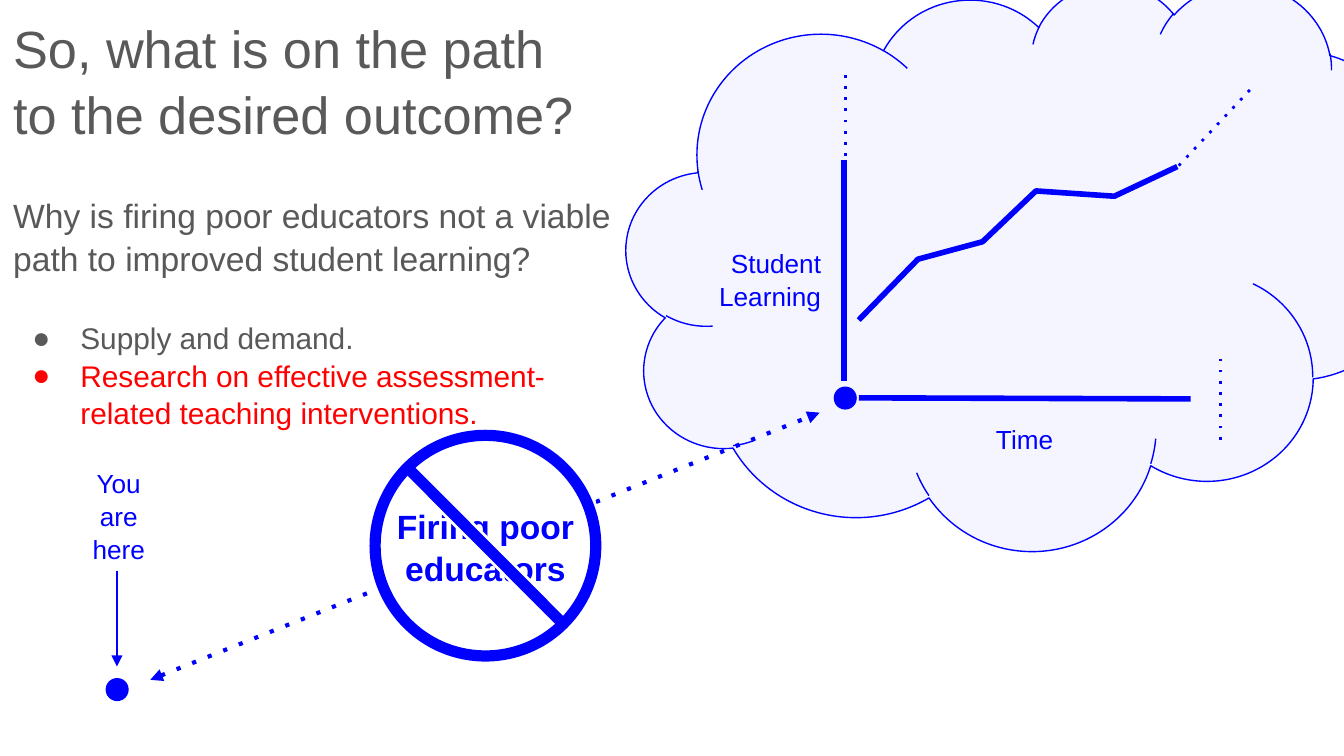
from itertools import pairwise

from lxml.etree import SubElement
from pptx import Presentation
from pptx.dml.color import RGBColor
from pptx.enum.shapes import MSO_CONNECTOR, MSO_SHAPE
from pptx.enum.text import MSO_ANCHOR, MSO_AUTO_SIZE, PP_ALIGN
from pptx.oxml.ns import qn
from pptx.util import Cm, Pt

BLUE = RGBColor(0x00, 0x00, 0xFF)
GREY = RGBColor(0x59, 0x59, 0x59)
RED = RGBColor(0xFF, 0x00, 0x00)
WHITE = RGBColor(0xFF, 0xFF, 0xFF)


def assign(target, values):
    for name, value in values.items():
        setattr(target, name, value)


class PathSlide:
    font = "Arial"
    inset = Cm(0.25)
    line_spacing = 1.05

    def __init__(self, deck):
        self.slide = deck.slides.add_slide(deck.slide_layouts[1])
        self.shapes = self.slide.shapes

    def begin_group(self):
        self.shapes = self.slide.shapes.add_group_shape().shapes

    def end_group(self):
        self.shapes = self.slide.shapes

    def frame(self, shape, anchor=MSO_ANCHOR.TOP):
        margins = {f"margin_{side}": self.inset for side in ("left", "top", "right", "bottom")}
        assign(shape.text_frame, {
            "word_wrap": True, "auto_size": MSO_AUTO_SIZE.NONE,
            "vertical_anchor": anchor, **margins,
        })

    def paragraph(self, paragraph, text, size, color, align=PP_ALIGN.LEFT, bold=False, before=0):
        assign(paragraph, {
            "alignment": align, "line_spacing": self.line_spacing,
            "space_before": Pt(before), "space_after": Pt(0),
        })
        run = paragraph.add_run()
        run.text = text
        assign(run.font, {"name": self.font, "size": Pt(size), "bold": bold})
        run.font.color.rgb = color

    def place(self, shape, left, top, width, height):
        assign(shape, {"left": Cm(left), "top": Cm(top), "width": Cm(width), "height": Cm(height)})

    def title(self, box, text, size):
        heading = self.slide.shapes.title
        self.place(heading, *box)
        self.frame(heading)
        self.paragraph(heading.text_frame.paragraphs[0], text, size, GREY)

    def reasons(self, box, question, points):
        body = self.slide.placeholders[1]
        self.place(body, *box)
        self.frame(body)
        lead = body.text_frame.paragraphs[0]
        self.paragraph(lead, question, 18, GREY)
        self.bullet(lead, None)
        for index, (point, color) in enumerate(points):
            entry = body.text_frame.add_paragraph()
            self.paragraph(entry, point, 16, color, before=0 if index else 21.7)
            self.bullet(entry, color)

    def bullet(self, paragraph, color):
        properties = paragraph._p.get_or_add_pPr()
        left, indent = (Cm(1.27), Cm(-0.91)) if color else (0, 0)
        properties.set("marL", str(left))
        properties.set("indent", str(indent))
        if color is None:
            SubElement(properties, qn("a:buNone"))
            return
        SubElement(SubElement(properties, qn("a:buClr")), qn("a:srgbClr"), val=str(color))
        SubElement(properties, qn("a:buFont"), typeface=self.font)
        SubElement(properties, qn("a:buChar"), char="●")

    def label(self, box, lines, size=14, align=PP_ALIGN.CENTER, anchor=MSO_ANCHOR.TOP,
              bold=False, fill=None):
        text_box = self.shapes.add_textbox(*map(Cm, box))
        self.frame(text_box, anchor)
        if fill is not None:
            text_box.fill.solid()
            text_box.fill.fore_color.rgb = fill
        frame = text_box.text_frame
        for index, line in enumerate(lines):
            entry = frame.add_paragraph() if index else frame.paragraphs[0]
            self.paragraph(entry, line, size, BLUE, align, bold)

    def outline(self, shape, width, color=BLUE):
        shape.line.color.rgb = color
        shape.line.width = Pt(width)

    def preset(self, kind, box, width=0.75, fill=None, opacity=None):
        shape = self.shapes.add_shape(kind, *map(Cm, box))
        shape.shadow.inherit = False
        self.outline(shape, width)
        if fill is None:
            shape.fill.background()
            return
        shape.fill.solid()
        shape.fill.fore_color.rgb = fill
        if opacity is not None:
            tint = shape._element.spPr.find(qn("a:solidFill")).find(qn("a:srgbClr"))
            SubElement(tint, qn("a:alpha"), val=str(opacity * 1000))

    def dot(self, left, top):
        self.preset(MSO_SHAPE.OVAL, (left, top, 0.41, 0.41), fill=BLUE)

    def line(self, start, end, width, color=BLUE, dotted=False, arrows=()):
        connector = self.shapes.add_connector(
            MSO_CONNECTOR.STRAIGHT, *map(Cm, (*start, *end)))
        self.outline(connector, width, color)
        stroke = connector.line._get_or_add_ln()
        if dotted:
            SubElement(stroke, qn("a:prstDash"), val="dot")
        for arrow in arrows:
            SubElement(stroke, qn(f"a:{arrow}"), type="triangle")
        SubElement(connector._element.spPr, qn("a:effectLst"))

    def curve(self, points, width):
        first, *rest = [(Cm(x), Cm(y)) for x, y in points]
        builder = self.shapes.build_freeform(*first)
        builder.add_line_segments(rest, close=False)
        trend = builder.convert_to_shape()
        trend.shadow.inherit = False
        trend.fill.background()
        self.outline(trend, width)


def main():
    deck = Presentation()
    assign(deck, {"slide_width": Cm(25.4), "slide_height": Cm(14.29)})
    page = PathSlide(deck)

    page.title((0, 0, 11.4, 1.6), "So, what is on the path to the desired outcome?", 28)
    page.reasons(
        (0, 3.4, 11.84, 5.05),
        "Why is firing poor educators not a viable path to improved student learning?",
        [("Supply and demand.", GREY),
         ("Research on effective assessment- related teaching interventions.", RED)])

    page.preset(MSO_SHAPE.CLOUD, (11.84, -0.33, 14.99, 10.72), fill=BLUE, opacity=4)

    page.begin_group()
    page.line((16.23, 7.52), (22.5, 7.54), 3)
    page.dot(15.77, 7.32)
    page.line((15.95, 7.21), (15.95, 3.02), 3)
    page.label((16.23, 7.72, 6.27, 1.32), ["Time"])
    page.label((12.85, 3.02, 2.92, 4.5), ["Student", "Learning"],
               align=PP_ALIGN.RIGHT, anchor=MSO_ANCHOR.MIDDLE)
    page.curve([(16.23, 6.05), (17.35, 4.9), (18.57, 4.57),
                (19.58, 3.61), (21.06, 3.71), (22.25, 3.15)], 3)
    for start, end in [((15.98, 2.95), (15.98, 1.42)),
                       ((23.06, 8.31), (23.06, 6.78)),
                       ((23.62, 1.7), (22.23, 3.18))]:
        page.line(start, end, 1.5, dotted=True)
    page.end_group()

    page.begin_group()
    page.dot(2.01, 12.83)
    page.line((2.21, 12.6), (2.21, 10.8), 1.5, arrows=["headEnd"])
    page.label((0.91, 8.56, 2.67, 2.26), ["You", "are", "here"])
    page.end_group()

    page.line((2.84, 12.85), (15.49, 7.8), 2.25, dotted=True, arrows=["headEnd", "tailEnd"])
    page.label((7.09, 9.27, 4.17, 2.08), ["Firing poor educators"],
               size=18, bold=True, fill=WHITE)
    for color, width in [(WHITE, 9), (BLUE, 6)]:
        page.line((7.7, 8.84), (10.64, 11.79), width, color)
    page.preset(MSO_SHAPE.OVAL, (7.09, 8.23, 4.17, 4.17), width=6)

    deck.save("out.pptx")


if __name__ == "__main__":
    main()
